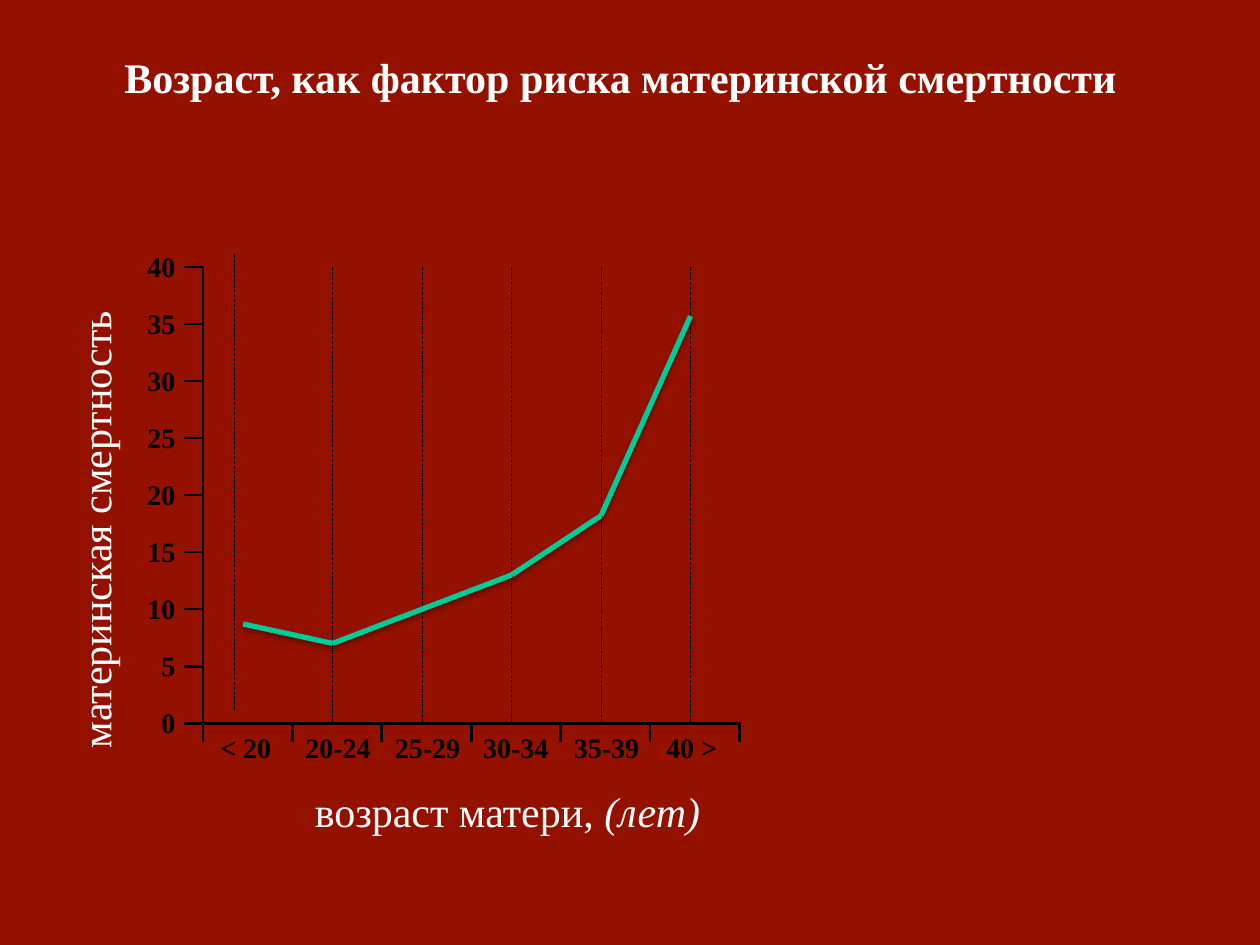
from itertools import pairwise

from lxml.etree import SubElement
from pptx import Presentation
from pptx.dml.color import RGBColor
from pptx.enum.dml import MSO_LINE
from pptx.enum.shapes import MSO_CONNECTOR
from pptx.enum.text import MSO_ANCHOR, PP_ALIGN
from pptx.oxml.ns import qn
from pptx.util import Inches, Pt

BACKGROUND = RGBColor(0x94, 0x11, 0x00)
WHITE = RGBColor(0xFF, 0xFF, 0xFF)
BLACK = RGBColor(0x00, 0x00, 0x00)
GREEN = RGBColor(0x00, 0xCC, 0x99)
FONT = "Times New Roman"

AXIS_LEFT, AXIS_TOP, AXIS_BOTTOM = 1.61, 2.12, 5.74
COLUMN_WIDTH = 0.71
FIRST_POINT = 1.93
TICK = 0.15
VALUE_MAX, VALUE_STEP = 40, 5
AGE_LABELS = [("< 20", 2.25), ("20-24", 3.04), ("25-29", 3.75),
              ("30-34", 4.45), ("35-39", 5.17), ("40 >", 5.79)]
MORTALITY = [(0, 8.7), (1, 7), (3, 13), (4, 18.2), (5, 35.7)]


def column_left(index):
    """Return the left edge of an age column."""
    return AXIS_LEFT + index * COLUMN_WIDTH


def point_left(index):
    """Return the horizontal place of a point on the curve."""
    return FIRST_POINT + index * COLUMN_WIDTH


def value_top(value):
    """Return the vertical place of a mortality value."""
    return AXIS_BOTTOM - value * (AXIS_BOTTOM - AXIS_TOP) / VALUE_MAX


def add_line(shapes, start, end, color=BLACK, width=1.5, dash=None):
    """Draw a straight line and return its empty effect list."""
    line = shapes.add_connector(
        MSO_CONNECTOR.STRAIGHT, *(Inches(length) for length in start + end))
    line.line.color.rgb = color
    line.line.width = Pt(width)
    if dash is not None:
        line.line.dash_style = dash
    return SubElement(line._element.spPr, qn("a:effectLst"))


def add_shadow(effects):
    """Put a soft downward shadow in an effect list."""
    shadow = SubElement(effects, qn("a:outerShdw"), blurRad=str(Pt(3.1)),
                        dist=str(Pt(1.8)), dir="5400000", rotWithShape="0")
    color = SubElement(shadow, qn("a:srgbClr"), val="000000")
    SubElement(color, qn("a:alpha"), val="35000")


def add_run(paragraph, text, size=24, color=WHITE, bold=False, italic=False):
    """Add one formatted run to a paragraph."""
    run = paragraph.add_run()
    run.text = text
    run.font.name = FONT
    run.font.size = Pt(size)
    run.font.color.rgb = color
    run.font.bold = bold
    run.font.italic = italic


def add_text_box(slide, left, top, width, height):
    """Add a wrapping text box and return it."""
    box = slide.shapes.add_textbox(
        Inches(left), Inches(top), Inches(width), Inches(height))
    box.text_frame.word_wrap = True
    return box


def add_axis_label(slide, text, right, top, width):
    """Add a right-aligned scale label that ends at the given edge."""
    frame = add_text_box(slide, right - width, top, width, 0.37).text_frame
    frame.margin_left = 0
    paragraph = frame.paragraphs[0]
    paragraph.alignment = PP_ALIGN.RIGHT
    add_run(paragraph, text, 16, BLACK, bold=True)


def add_axis_title(slide, left, top, width, runs, rotation=0):
    """Add an axis title made of text and italic pairs."""
    box = add_text_box(slide, left, top, width, 0.51)
    box.rotation = rotation
    box.text_frame.vertical_anchor = MSO_ANCHOR.MIDDLE
    for text, italic in runs:
        add_run(box.text_frame.paragraphs[0], text, italic=italic)


def add_title(slide, text):
    """Place and fill the title placeholder."""
    title = slide.shapes.title
    title.left, title.top = Inches(0.51), Inches(0.36)
    title.width, title.height = Inches(9), Inches(1.14)
    frame = title.text_frame
    frame.vertical_anchor = MSO_ANCHOR.TOP
    frame.margin_right = Inches(0.27)
    paragraph = frame.paragraphs[0]
    paragraph.alignment = PP_ALIGN.CENTER
    add_run(paragraph, text, bold=True)


def add_axes(slide):
    """Draw both axes with their ticks and labels."""
    shapes = slide.shapes
    tick_left, tick_bottom = AXIS_LEFT - TICK, AXIS_BOTTOM + TICK
    axis_right = column_left(len(AGE_LABELS))
    add_line(shapes, (AXIS_LEFT, AXIS_TOP), (AXIS_LEFT, tick_bottom))
    add_line(shapes, (tick_left, AXIS_BOTTOM), (axis_right, AXIS_BOTTOM))
    for value in range(VALUE_MAX, -1, -VALUE_STEP):
        top = value_top(value)
        if value:
            add_line(shapes, (tick_left, top), (AXIS_LEFT, top))
        add_axis_label(slide, str(value), 1.49, top - 0.19, 0.43)
    for index, (label, right) in enumerate(AGE_LABELS):
        left = column_left(index + 1)
        add_line(shapes, (left, AXIS_BOTTOM), (left, tick_bottom))
        add_axis_label(slide, label, right, 5.75, 0.87)


def add_guides(slide):
    """Draw the dashed guide of every age group."""
    for index in range(len(AGE_LABELS)):
        left, rise = (point_left(index), 0) if index else (1.86, 0.1)
        add_line(slide.shapes, (left, AXIS_TOP - rise),
                 (left, AXIS_BOTTOM - rise), width=0.25,
                 dash=MSO_LINE.LONG_DASH)


def add_curve(slide):
    """Draw the mortality curve as a group of shadowed segments."""
    group = slide.shapes.add_group_shape()
    points = [(point_left(index), value_top(value))
              for index, value in MORTALITY]
    for start, end in pairwise(reversed(points)):
        add_shadow(add_line(group.shapes, start, end, GREEN, 3))


def main():
    """Build the slide and save it."""
    presentation = Presentation()
    presentation.slide_width = Inches(10)
    presentation.slide_height = Inches(7.5)
    slide = presentation.slides.add_slide(presentation.slide_layouts[5])
    slide.background.fill.solid()
    slide.background.fill.fore_color.rgb = BACKGROUND
    add_title(slide, "Возраст, как фактор риска материнской смертности")
    add_axes(slide)
    add_guides(slide)
    add_curve(slide)
    add_axis_title(slide, -1.26, 3.77, 4.02,
                   [("материнская смертность", False)], rotation=270)
    add_axis_title(slide, 2.4, 6.18, 3.38,
                   [("возраст матери, ", False), ("(лет)", True)])
    presentation.save("out.pptx")


if __name__ == "__main__":
    main()
